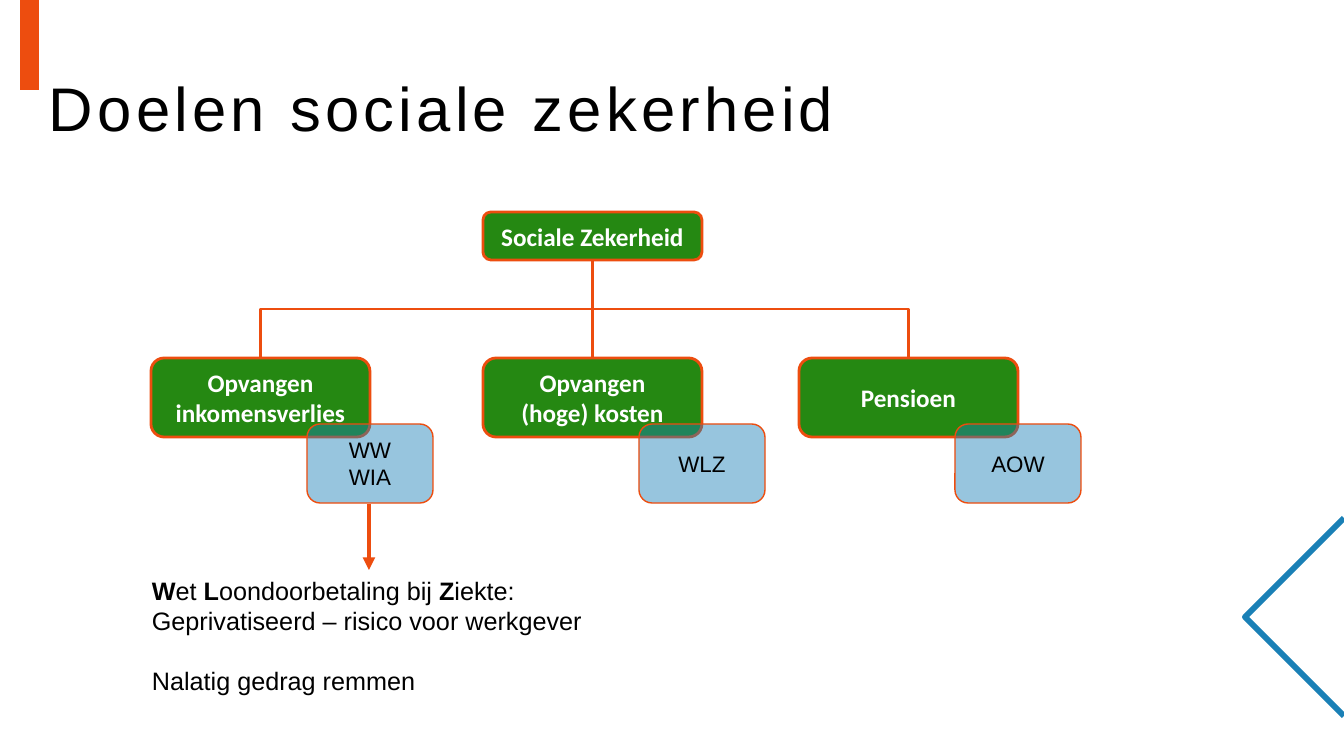
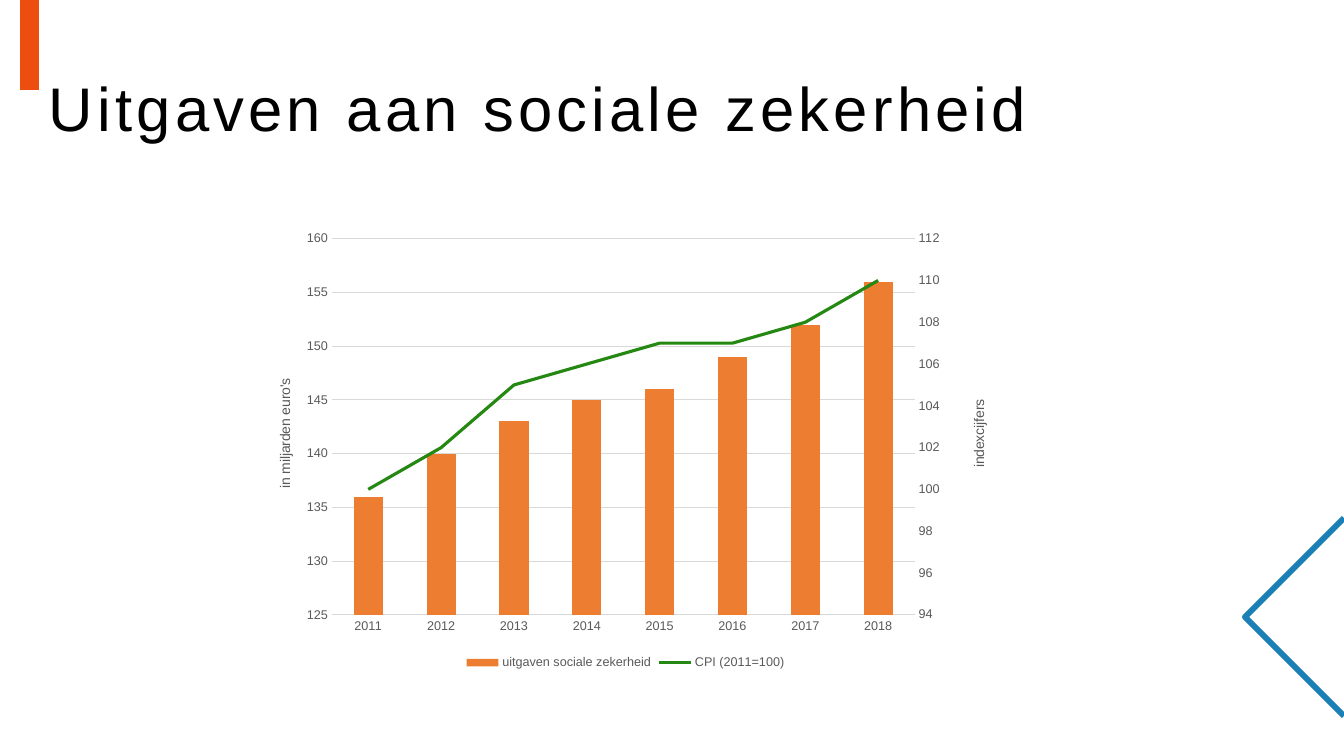
import copy
from lxml import etree
from pptx import Presentation, util as u
from pptx.chart.axis import ValueAxis
from pptx.chart.data import CategoryChartData
from pptx.dml.color import RGBColor
from pptx.enum import chart as ch, shapes, text
from pptx.oxml import parse_xml
from pptx.oxml.ns import nsdecls, qn

# Content
TITLES = ["Doelen sociale zekerheid", "Uitgaven aan sociale zekerheid"]
ROOT = "Sociale Zekerheid"
GOALS = [  # left edge, goal, laws
    (151, "Opvangen\ninkomensverlies", "WW\nWIA"),
    (483, "Opvangen\n(hoge) kosten", "WLZ"),
    (799, "Pensioen", "AOW"),
]
SICK = ["*W*et *L*oondoorbetaling bij *Z*iekte:",
        "Geprivatiseerd – risico voor werkgever",
        "Nalatig gedrag remmen"]
YEARS = [str(y) for y in range(2011, 2019)]
SPEND = ("uitgaven sociale zekerheid", [136, 140, 143, 145, 146, 149, 152, 156])
CPI = ("CPI (2011=100)", [100, 102, 105, 106, 107, 107, 108, 110])
LEFT = ("in miljarden euro's", 125, 160, 5, (273, 376))
RIGHT = ("indexcijfers", 94, 112, 2, (967, 397))

# Style
RED = RGBColor(0xED, 0x4D, 0x0F)
GREEN = RGBColor(0x25, 0x88, 0x12)
BLUE = RGBColor(0x1A, 0x80, 0xB6)
BAR = RGBColor(0xED, 0x7D, 0x31)
GREY = RGBColor(0x59, 0x59, 0x59)
GRID = RGBColor(0xD9, 0xD9, 0xD9)
BLACK = RGBColor(0, 0, 0)
WHITE = RGBColor(255, 255, 255)
SCALE = 914400 / 100.8
MID = text.PP_ALIGN.CENTER


def px(*vals):
    return [u.Emu(round(v * SCALE)) for v in vals]


def write(frame, paras, size=18, font="Arial", color=BLACK, bold=False,
          align=None, anchor=text.MSO_ANCHOR.MIDDLE, wrap=True, gap=None, track=None):
    """Fill a frame; *stars* mark bold words, a newline is a line break."""
    frame.word_wrap, frame.vertical_anchor = wrap, anchor
    for i, para in enumerate(paras):
        p = frame.paragraphs[0] if i == 0 else frame.add_paragraph()
        p.alignment = align
        for j, part in enumerate(para.split("*")):
            for k, line in enumerate(part.split("\n")):
                if k:
                    p.add_line_break()
                if not line:
                    continue
                run = p.add_run()
                run.text = line
                face = run.font
                face.size, face.name, face.bold = u.Pt(size), font, bold or j % 2 == 1
                face.color.rgb = color
                if track:
                    run._r.get_or_add_rPr().set("spc", str(track * 100))
    if track:
        p.line_spacing = 0.9
    if gap:
        p.space_before = u.Pt(gap)


def box(slide, kind, at, fill, line=None, width=2, alpha=None):
    shape = slide.shapes.add_shape(kind, *px(*at))
    shape.shadow.inherit = False
    shape.fill.solid()
    shape.fill.fore_color.rgb = fill
    if alpha:
        tone = shape._element.spPr.find(".//" + qn("a:srgbClr"))
        etree.SubElement(tone, qn("a:alpha")).set("val", str(alpha * 1000))
    if line is None:
        shape.line.fill.background()
    else:
        shape.line.color.rgb, shape.line.width = line, u.Pt(width)
    return shape


def link(slide, kind, ends, width=2, turn=0, arrow=False):
    line = slide.shapes.add_connector(kind, *px(*ends))
    line.line.color.rgb, line.line.width = RED, u.Pt(width)
    prop = line._element.spPr
    if turn:
        prop.find(qn("a:xfrm")).set("rot", str(turn * 60000))
    if arrow:
        etree.SubElement(prop.find(qn("a:ln")), qn("a:tailEnd")).set("type", "triangle")
    etree.SubElement(prop, qn("a:effectLst"))


def start(deck, title):
    """Add a slide with the shared bar, corner and title."""
    slide = deck.slides.add_slide(deck.slide_layouts[6])
    path = slide.shapes.build_freeform(1344, 518, scale=SCALE)
    path.add_line_segments([(1245, 617), (1344, 716)], close=False)
    corner = path.convert_to_shape()
    corner.shadow.inherit = False
    corner.fill.background()
    corner.line.color.rgb, corner.line.width = BLUE, u.Pt(4.25)
    box(slide, shapes.MSO_SHAPE.RECTANGLE, (20, 0, 19, 90), RED)
    head = slide.shapes.add_textbox(*px(39, 39, 1271, 146))
    write(head.text_frame, [title], size=44, track=3)
    return slide


def tree(slide):
    wide, high, low, top = 219, 79, 260, 358
    root = 483 + wide / 2
    round_box = shapes.MSO_SHAPE.ROUNDED_RECTANGLE
    kinds = shapes.MSO_CONNECTOR
    label = dict(font="Calibri", color=WHITE, bold=True, align=MID)
    # Branches: an elbow is laid out sideways, then turned upright
    for x, _, _ in GOALS:
        end = x + wide / 2
        if end == root:
            link(slide, kinds.STRAIGHT, (root, low, root, top))
            continue
        cx, cy = (root + end) / 2, (low + top) / 2
        dx, dy = (top - low) / 2, abs(end - root) / 2
        side = 1 if end < root else -1
        link(slide, kinds.ELBOW, (cx - side * dx, cy - dy, cx + side * dx, cy + dy),
             turn=90 if side == 1 else 270)
    # Boxes
    head = box(slide, round_box, (483, 212, wide, 48), GREEN, RED)
    write(head.text_frame, [ROOT], **label)
    for x, goal, laws in GOALS:
        write(box(slide, round_box, (x, top, wide, high), GREEN, RED).text_frame,
              [goal], **label)
        note = box(slide, round_box, (x + 156, 424, 126, high), BLUE, RED, 1, alpha=45)
        write(note.text_frame, [laws], size=16, align=MID)
    # Sick pay
    body = slide.shapes.add_textbox(*px(142, 570, 455, 132))
    write(body.text_frame, SICK, anchor=text.MSO_ANCHOR.TOP, wrap=False, gap=21)
    link(slide, kinds.STRAIGHT, (369, 504, 369, 570), width=3, arrow=True)


FRAME = (250, 223, 751, 451)
PLOT = (332, 239, 583, 376)


def place(x, y, w=None, h=None):
    """Manual chart layout from slide pixels."""
    vals = [("x", (x - FRAME[0]) / FRAME[2]), ("y", (y - FRAME[1]) / FRAME[3])]
    modes = '<c:xMode val="edge"/><c:yMode val="edge"/>'
    if w:
        vals += [("w", w / FRAME[2]), ("h", h / FRAME[3])]
        modes = '<c:layoutTarget val="inner"/>' + modes
    body = "".join(f'<c:{n} val="{v:.3f}"/>' for n, v in vals)
    return parse_xml(f'<c:layout {nsdecls("c")}><c:manualLayout>{modes}{body}'
                     '</c:manualLayout></c:layout>')


def small(font, size=9):
    font.size, font.name, font.bold = u.Pt(size), "Arial", False
    font.color.rgb = GREY


def scale(axis, name, low, high, step, spot):
    axis.minimum_scale, axis.maximum_scale, axis.major_unit = low, high, step
    axis.major_tick_mark = ch.XL_TICK_MARK.NONE
    axis.format.line.fill.background()
    small(axis.tick_labels.font)
    axis.tick_labels.number_format = "General"
    axis.tick_labels.number_format_is_linked = False
    frame = axis.axis_title.text_frame
    frame.text = name
    small(frame.paragraphs[0].runs[0].font, 10)
    turn = frame._txBody.find(qn("a:bodyPr"))
    turn.set("rot", "-5400000")
    turn.set("vert", "horz")
    title = axis.axis_title._element
    for old in title.findall(qn("c:layout")):
        title.remove(old)
    title.find(qn("c:tx")).addnext(place(*spot))


def second(area):
    """Move the last series to a line on its own axes; return the right axis."""
    bars = area.find(qn("c:barChart"))
    ser = bars.findall(qn("c:ser"))[-1]
    for flip in ser.findall(qn("c:invertIfNegative")):
        ser.remove(flip)
    line = parse_xml(f'<c:lineChart {nsdecls("c")}><c:grouping val="standard"/>'
                     '<c:varyColors val="0"/><c:marker val="1"/>'
                     '<c:axId val="5001"/><c:axId val="5002"/></c:lineChart>')
    line.insert(2, ser)
    bars.addnext(line)
    cat, val = area.find(qn("c:catAx")), area.find(qn("c:valAx"))
    twins = copy.deepcopy(val), copy.deepcopy(cat)
    for axis, own, other in zip(twins, ("5002", "5001"), ("5001", "5002")):
        axis.find(qn("c:axId")).set("val", own)
        axis.find(qn("c:crossAx")).set("val", other)
    val.addnext(twins[0])
    twins[0].addnext(twins[1])
    twins[0].find(qn("c:axPos")).set("val", "r")
    twins[0].find(qn("c:crosses")).set("val", "max")
    right = ValueAxis(twins[0])
    right.has_major_gridlines = False
    twins[1].find(qn("c:delete")).set("val", "1")
    return right


def graph(slide):
    data = CategoryChartData()
    data.categories = YEARS
    for name, vals in (SPEND, CPI):
        data.add_series(name, vals)
    chart = slide.shapes.add_chart(ch.XL_CHART_TYPE.COLUMN_CLUSTERED,
                                   *px(*FRAME), data).chart
    chart.has_title = False
    small(chart.font, 10)
    chart.has_legend = True
    chart.legend.position = ch.XL_LEGEND_POSITION.BOTTOM
    chart.legend.include_in_layout = False
    small(chart.legend.font)
    # Axes
    cat, val = chart.category_axis, chart.value_axis
    cat.major_tick_mark = ch.XL_TICK_MARK.NONE
    small(cat.tick_labels.font)
    val.has_major_gridlines = True
    for line in (cat.format.line, val.major_gridlines.format.line):
        line.color.rgb, line.width = GRID, u.Pt(0.75)
    area = chart._chartSpace.find(".//" + qn("c:plotArea"))
    right = second(area)
    scale(val, *LEFT)
    scale(right, *RIGHT)
    for old in area.findall(qn("c:layout")):
        area.remove(old)
    area.insert(0, place(*PLOT))
    # Series
    bars, lines = chart.plots
    bars.vary_by_categories, bars.gap_width = False, 150
    spend, cpi = bars.series[0], lines.series[0]
    spend.format.fill.solid()
    spend.format.fill.fore_color.rgb = BAR
    cpi.format.line.color.rgb, cpi.format.line.width = GREEN, u.Pt(2.25)
    cpi.smooth = False
    cpi.marker.style = ch.XL_MARKER_STYLE.NONE


deck = Presentation()
deck.slide_width, deck.slide_height = px(1344, 756)
for title, fill in zip(TITLES, (tree, graph)):
    fill(start(deck, title))
deck.save("out.pptx")
